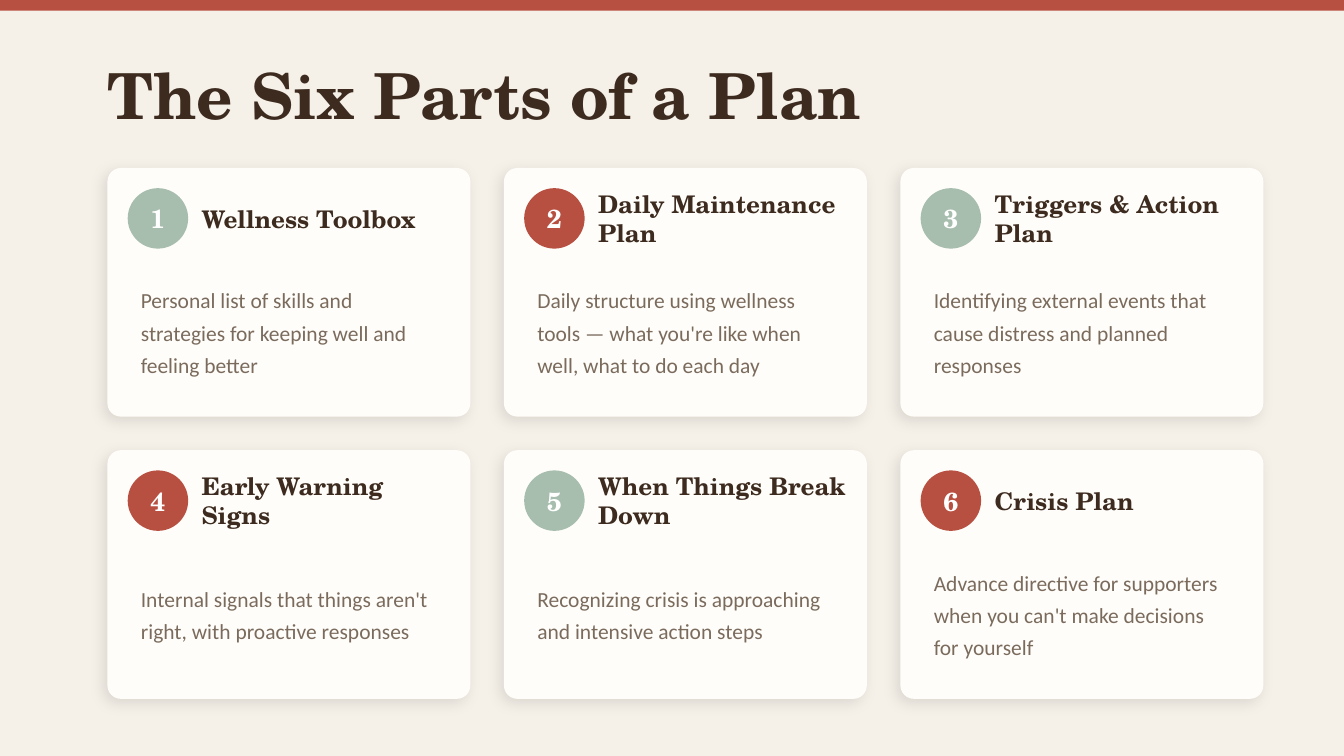
from lxml import etree
from pptx import Presentation
from pptx.dml.color import RGBColor
from pptx.enum import shapes, text
from pptx.oxml import ns
from pptx.util import Pt

HEADING = "The Six Parts of a Plan"
PARTS = [
    ("Wellness Toolbox",
     "Personal list of skills and strategies for keeping well and feeling better"),
    ("Daily Maintenance Plan",
     "Daily structure using wellness tools — what you're like when well, what to do each day"),
    ("Triggers & Action Plan",
     "Identifying external events that cause distress and planned responses"),
    ("Early Warning Signs",
     "Internal signals that things aren't right, with proactive responses"),
    ("When Things Break Down",
     "Recognizing crisis is approaching and intensive action steps"),
    ("Crisis Plan",
     "Advance directive for supporters when you can't make decisions for yourself"),
]

SERIF, SANS = "TeX Gyre Schola", "Calibri"
CREAM, CARD, WHITE = "F5F0E8", "FFFDF9", "FFFFFF"
RUST, SAGE = "B85042", "A7BEAE"
BROWN, TAUPE = "3D2B1F", "7A6B5D"

WIDTH, HEIGHT = 720, 405
COLUMNS = 3
LEFT, TOP = 57.6, 90
CARD_W, CARD_H, GAP = 194.4, 133.2, 18
PAD, BADGE, CORNER = 10.8, 32.4, 7.2
NAME_X = BODY_Y = 50.4
BODY_H = 72


def rgb(value):
    return RGBColor.from_string(value)


def add_block(slide, kind, box, color):
    block = slide.shapes.add_shape(kind, *map(Pt, box))
    block.fill.solid()
    block.fill.fore_color.rgb = rgb(color)
    block.line.fill.background()
    block.shadow.inherit = False
    return block


def add_words(slide, words, box, size, color, font=SERIF, bold=True,
              align=text.PP_ALIGN.LEFT, spacing=None, inset=True):
    frame = slide.shapes.add_textbox(*map(Pt, box)).text_frame
    frame.word_wrap = True
    frame.vertical_anchor = text.MSO_ANCHOR.MIDDLE
    if not inset:
        frame.margin_left = frame.margin_right = 0
        frame.margin_top = frame.margin_bottom = 0
    paragraph = frame.paragraphs[0]
    paragraph.alignment = align
    paragraph.line_spacing = spacing
    run = paragraph.add_run()
    run.text = words
    run.font.name = font
    run.font.size = Pt(size)
    run.font.bold = bold
    run.font.color.rgb = rgb(color)


def add_soft_shadow(card):
    effects = card.element.spPr.find(ns.qn("a:effectLst"))
    shadow = etree.SubElement(effects, ns.qn("a:outerShdw"), blurRad=str(Pt(8)),
                              dist=str(Pt(3)), dir=str(135 * 60000),
                              algn="bl", rotWithShape="0")
    black = etree.SubElement(shadow, ns.qn("a:srgbClr"), val="000000")
    etree.SubElement(black, ns.qn("a:alpha"), val="10000")


def add_part(slide, index, name, summary):
    row, column = divmod(index, COLUMNS)
    x = LEFT + column * (CARD_W + GAP)
    y = TOP + row * (CARD_H + GAP)
    card = add_block(slide, shapes.MSO_SHAPE.ROUNDED_RECTANGLE,
                     (x, y, CARD_W, CARD_H), CARD)
    card.adjustments[0] = CORNER / CARD_H
    add_soft_shadow(card)

    badge = (x + PAD, y + PAD, BADGE, BADGE)
    add_block(slide, shapes.MSO_SHAPE.OVAL, badge, RUST if index % 2 else SAGE)
    add_words(slide, str(index + 1), badge, 14, WHITE, align=text.PP_ALIGN.CENTER)
    add_words(slide, name, (x + NAME_X, y + PAD, CARD_W - NAME_X - PAD, BADGE),
              13, BROWN, inset=False)
    add_words(slide, summary, (x + PAD, y + BODY_Y, CARD_W - 2 * PAD, BODY_H),
              11.5, TAUPE, font=SANS, bold=False, spacing=1.25)


def main():
    deck = Presentation()
    deck.slide_width, deck.slide_height = Pt(WIDTH), Pt(HEIGHT)
    slide = deck.slides.add_slide(deck.slide_layouts[6])
    slide.background.fill.solid()
    slide.background.fill.fore_color.rgb = rgb(CREAM)

    add_block(slide, shapes.MSO_SHAPE.RECTANGLE, (0, 0, WIDTH, 5.76), RUST)
    add_words(slide, HEADING, (LEFT, 25.2, 604.8, 50.4), 34, BROWN, inset=False)
    for index, (name, summary) in enumerate(PARTS):
        add_part(slide, index, name, summary)
    deck.save("out.pptx")


if __name__ == "__main__":
    main()
